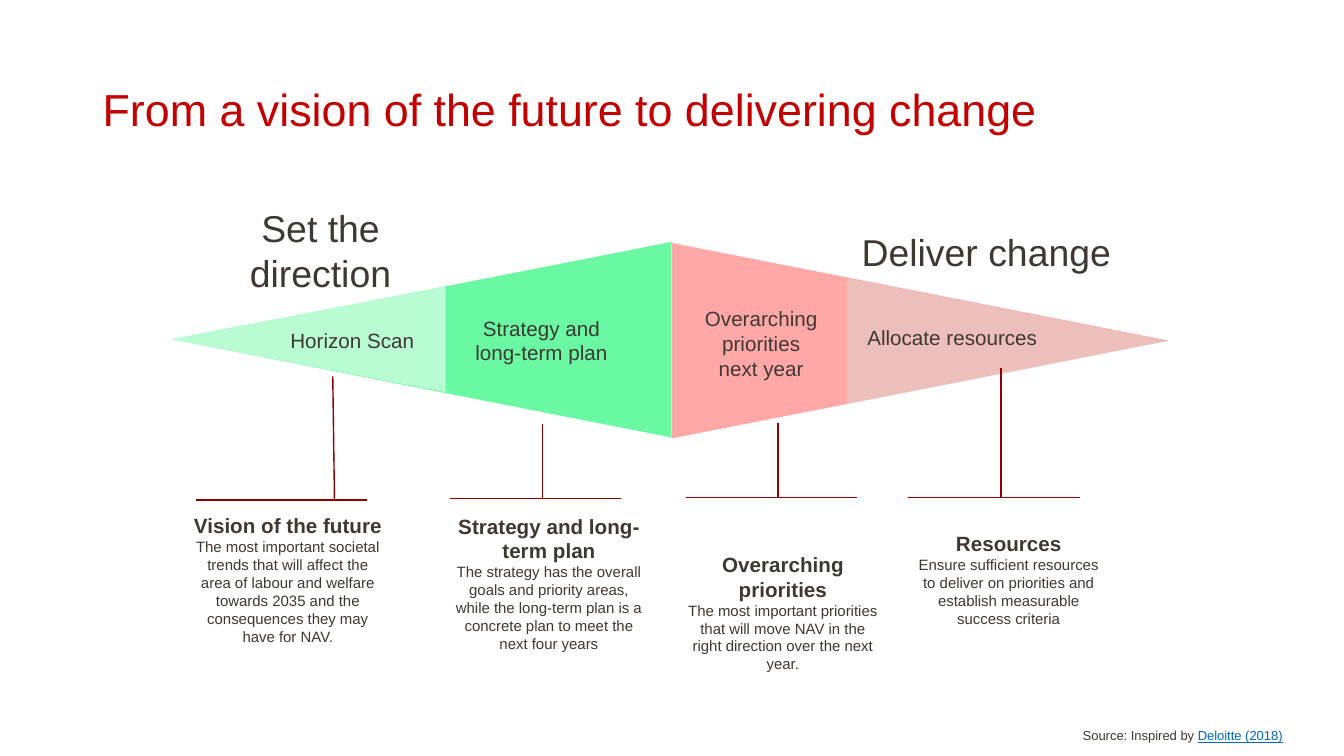
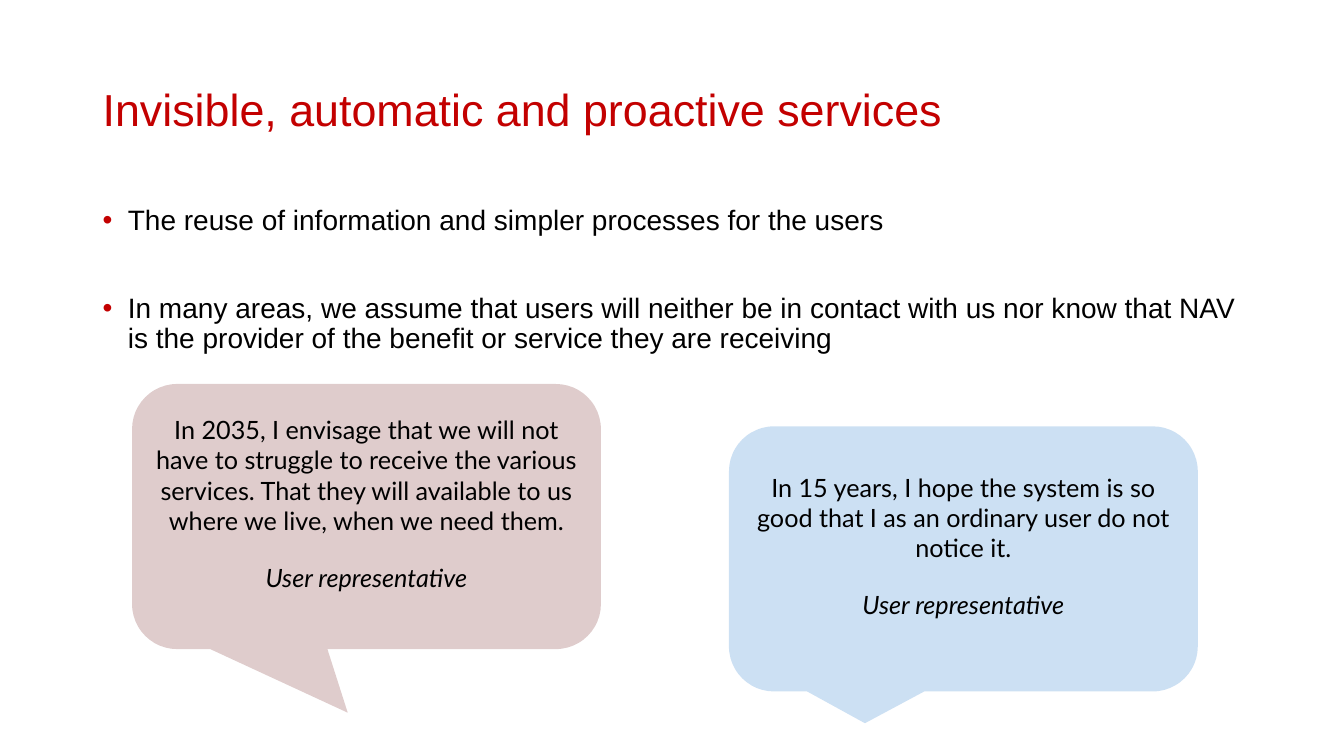
"""Builds two slides on turning a vision of the future into delivered change."""
from dataclasses import dataclass

from lxml import etree
from pptx import Presentation
from pptx.dml.color import RGBColor
from pptx.enum.shapes import MSO_SHAPE
from pptx.enum.text import MSO_ANCHOR, PP_ALIGN
from pptx.oxml.ns import qn
from pptx.util import Inches, Pt

TRIANGLE = MSO_SHAPE.ISOSCELES_TRIANGLE
LEADER = MSO_SHAPE.LINE_CALLOUT_1_ACCENT_BAR
BUBBLE = MSO_SHAPE.ROUNDED_RECTANGULAR_CALLOUT
TOP, MIDDLE = MSO_ANCHOR.TOP, MSO_ANCHOR.MIDDLE
LEFT, CENTER, RIGHT = PP_ALIGN.LEFT, PP_ALIGN.CENTER, PP_ALIGN.RIGHT


@dataclass(frozen=True)
class Theme:
    font: str = "Arial"
    quote_font: str = "Lato"
    red: str = "C30000"
    ink: str = "3E3832"
    black: str = "000000"
    blue: str = "0067C5"
    leader: str = "900000"
    maroon: str = "620000"
    green: str = "2CF67C"
    pale_green: str = "B9FCD3"
    pink: str = "FFA8A7"
    sand: str = "DBD7D3"
    title_size: float = 32
    heading_size: float = 26.7
    body_size: float = 20
    quote_size: float = 18
    label_size: float = 14.7
    note_size: float = 10.7
    source_size: float = 9.3


THEME = Theme()


def add_bullet(paragraph, color, indent=0.25):
    props = paragraph._p.get_or_add_pPr()
    props.set("marL", str(Inches(indent)))
    props.set("indent", str(-Inches(indent)))
    bullet_color = etree.SubElement(props, qn("a:buClr"))
    etree.SubElement(bullet_color, qn("a:srgbClr"), val=color)
    etree.SubElement(props, qn("a:buFont"), typeface=THEME.font)
    etree.SubElement(props, qn("a:buChar"), char="•")


def write(frame, text, *, size, color=THEME.ink, font=THEME.font, bold=False, italic=False,
          underline=False, align=LEFT, before=0, spacing=None, bullet=None, inline=False):
    paragraph = frame.paragraphs[-1]
    if paragraph.runs and not inline:
        paragraph = frame.add_paragraph()
    if not inline:
        if bullet:
            add_bullet(paragraph, bullet)
        paragraph.alignment = align
        paragraph.space_before = Pt(before)
        if spacing:
            paragraph.line_spacing = spacing
    run = paragraph.add_run()
    run.text = text
    run.font.name = font
    run.font.size = Pt(size)
    run.font.bold = bold
    run.font.italic = italic
    run.font.underline = underline
    run.font.color.rgb = RGBColor.from_string(color)


class Deck:
    def __init__(self, theme):
        self.theme = theme
        self.presentation = Presentation()
        self.presentation.slide_width = Inches(13.33)
        self.presentation.slide_height = Inches(7.5)
        self.slide = None

    def new_slide(self, title):
        self.slide = self.presentation.slides.add_slide(self.presentation.slide_layouts[6])
        heading = self.frame(0.92, 0.53, 11.5, 1.17, anchor=MIDDLE, inset=(0.1, 0.05))
        write(heading, title, size=self.theme.title_size, color=self.theme.red, spacing=0.9)

    def frame(self, left, top, width, height, anchor=TOP, inset=(0, 0)):
        box = self.slide.shapes.add_textbox(Inches(left), Inches(top), Inches(width), Inches(height))
        frame = box.text_frame
        frame.word_wrap = True
        frame.vertical_anchor = anchor
        frame.margin_left = frame.margin_right = Inches(inset[0])
        frame.margin_top = frame.margin_bottom = Inches(inset[1])
        return frame

    def shape(self, kind, left, top, width, height, fill=None, alpha=100, line=None, rotation=0):
        if rotation:
            left, top = left + (width - height) / 2, top + (height - width) / 2
            width, height = height, width
        shape = self.slide.shapes.add_shape(
            kind, Inches(left), Inches(top), Inches(width), Inches(height))
        shape.rotation = rotation
        shape.shadow.inherit = False
        if fill:
            shape.fill.solid()
            shape.fill.fore_color.rgb = RGBColor.from_string(fill)
            if alpha < 100:
                color = shape._element.spPr.find(qn("a:solidFill")).find(qn("a:srgbClr"))
                etree.SubElement(color, qn("a:alpha"), val=str(alpha * 1000))
        else:
            shape.fill.background()
        if line:
            shape.line.color.rgb = RGBColor.from_string(line)
            shape.line.width = Pt(1)
        else:
            shape.line.fill.background()
        return shape

    def adjust(self, shape, values):
        for index, value in enumerate(values):
            shape.adjustments[index] = value

    def label(self, left, top, width, text, size):
        frame = self.frame(left, top, width, 0.73, anchor=MIDDLE)
        for line in text.split("\n"):
            write(frame, line, size=size, align=CENTER)

    def note(self, left, top, height, heading, detail):
        frame = self.frame(left, top, 1.93, height, anchor=MIDDLE)
        write(frame, heading, size=self.theme.label_size, bold=True, align=CENTER)
        write(frame, detail, size=self.theme.note_size, align=CENTER)

    def leader(self, left, top, bends):
        leader = self.shape(LEADER, left, top, 1.7, 0.5, line=self.theme.leader, rotation=90)
        self.adjust(leader, bends)

    def quote(self, left, top, fill, tail, text, speaker):
        bubble = self.shape(BUBBLE, left, top, 4.65, 2.63, fill=fill, alpha=20)
        self.adjust(bubble, tail)
        frame = bubble.text_frame
        frame.word_wrap = True
        frame.vertical_anchor = MIDDLE
        frame.margin_bottom = Inches(0.31)
        style = {"size": self.theme.quote_size, "font": self.theme.quote_font,
                 "color": self.theme.black, "align": CENTER}
        write(frame, text, **style)
        write(frame, speaker, italic=True, before=19, **style)


def build_vision_slide(deck):
    theme = deck.theme
    deck.new_slide("From a vision of the future to delivering change")

    for left, top, width, height, fill, alpha, rotation in (
            (1.73, 2.4, 4.93, 1.94, theme.green, 70, 270),
            (6.66, 2.41, 4.93, 1.94, theme.pink, 100, 90),
            (1.69, 2.84, 2.73, 1.05, theme.pale_green, 100, 270),
            (8.4, 2.76, 3.18, 1.25, theme.sand, 50, 90)):
        deck.shape(TRIANGLE, left, top, width, height, fill, alpha, rotation=rotation)

    for left, top, width, text, size in (
            (2.53, 3.01, 1.93, "Horizon Scan", theme.label_size),
            (4.56, 3.01, 1.62, "Strategy and long-term plan", theme.label_size),
            (6.67, 3.04, 1.76, "Overarching priorities\nnext year", theme.label_size),
            (8.48, 2.98, 1.93, "Allocate resources", theme.label_size),
            (1.94, 2.12, 2.48, "Set the direction", theme.heading_size),
            (8.3, 2.13, 2.97, "Deliver change", theme.heading_size)):
        deck.label(left, top, width, text, size)

    for left, top, bends in (
            (1.94, 5.0, (0.19, -0.08, 0.2, -2.53)),
            (4.46, 5.04, (0.46, -0.19, 0.46, -1.66)),
            (6.8, 5.03, (0.46, -0.19, 0.46, -1.66)),
            (9.01, 5.03, (0.46, -0.19, 0.46, -2.76))):
        deck.leader(left, top, bends)

    for left, top, height, heading, detail in (
            (1.89, 5.38, 0.73, "Vision of the future",
             "The most important societal trends that will affect the area of labour and "
             "welfare towards 2035 and the consequences they may have for NAV."),
            (4.48, 5.38, 0.81, "Strategy and long-term plan",
             "The strategy has the overall goals and priority areas, while the long-term "
             "plan is a concrete plan to meet the next four years"),
            (6.8, 5.61, 0.93, "Overarching priorities",
             "The most important priorities that will move NAV in the right direction "
             "over the next year."),
            (9.04, 5.38, 0.73, "Resources",
             "Ensure sufficient resources to deliver on priorities and establish "
             "measurable success criteria")):
        deck.note(left, top, height, heading, detail)

    source = deck.frame(9.72, 7.17, 3.1, 0.26, inset=(0.1, 0.05))
    write(source, "Source: Inspired by ", size=theme.source_size, align=RIGHT)
    write(source, "Deloitte (2018)", size=theme.source_size, color=theme.blue,
          underline=True, inline=True)


def build_services_slide(deck):
    theme = deck.theme
    deck.new_slide("Invisible, automatic and proactive services")

    points = deck.frame(0.92, 2, 11.5, 2.59, inset=(0.1, 0.05))
    for before, point in (
            (0, "The reuse of information and simpler processes for the users"),
            (41, "In many areas, we assume that users will neither be in contact with us nor know "
                 "that NAV is the provider of the benefit or service they are receiving")):
        write(points, point, size=theme.body_size, color=theme.black, before=before,
              spacing=0.9, bullet=theme.red)

    for left, top, fill, tail, text in (
            (7.23, 4.23, theme.blue, (-0.21, 0.62, 0.17),
             "In 15 years, I hope the system is so good that I as an ordinary user do not "
             "notice it."),
            (1.31, 3.81, theme.maroon, (-0.04, 0.74, 0.17),
             "In 2035, I envisage that we will not have to struggle to receive the various "
             "services. That they will available to us where we live, when we need them.")):
        deck.quote(left, top, fill, tail, text, "User representative")


def main():
    deck = Deck(THEME)
    build_vision_slide(deck)
    build_services_slide(deck)
    deck.presentation.save("out.pptx")


if __name__ == "__main__":
    main()
